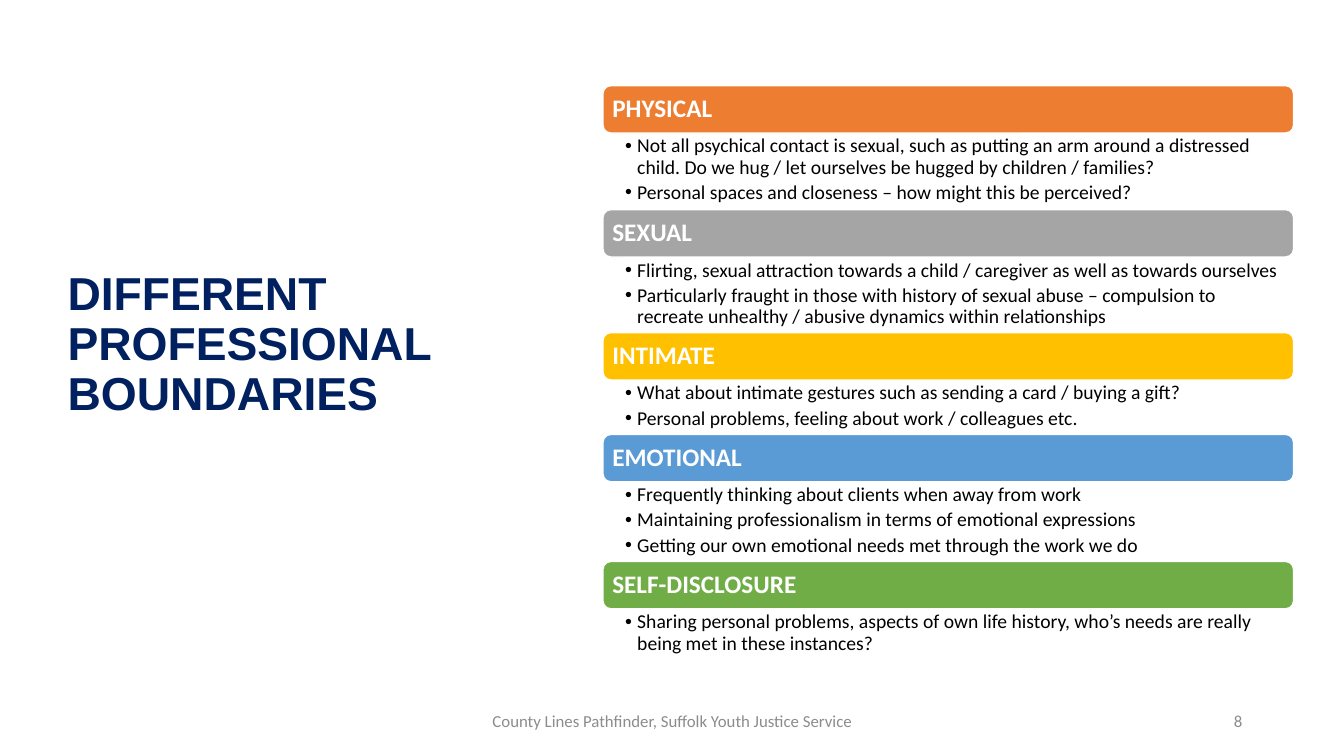
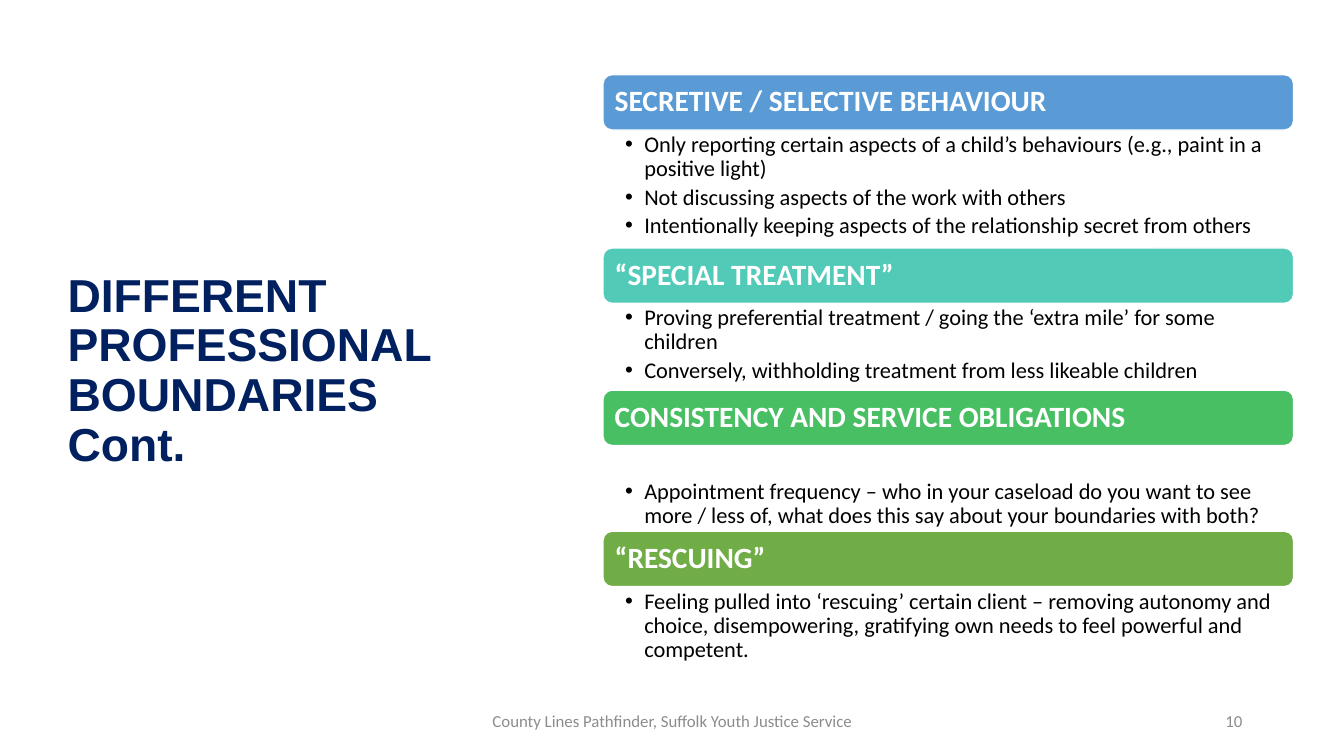
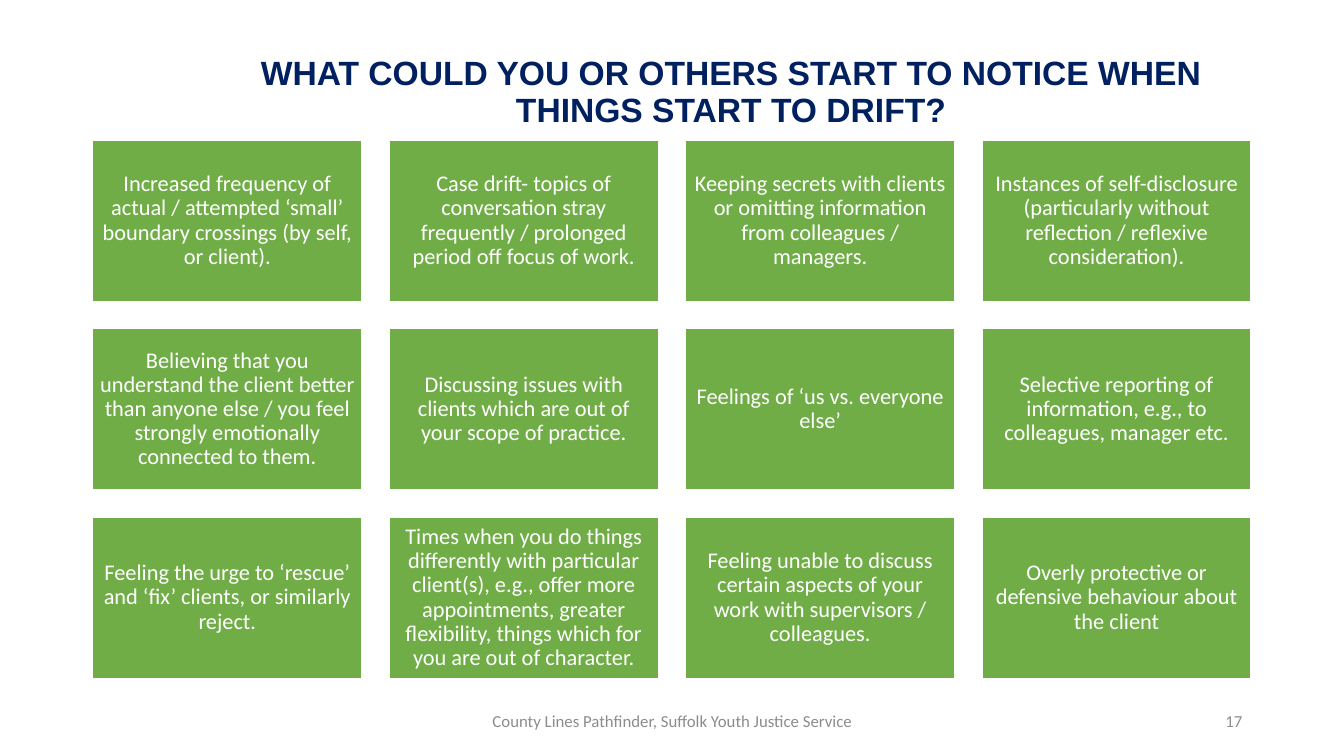
"""Build three slides on professional boundaries."""
from lxml import etree
from pptx import Presentation
from pptx.dml.color import RGBColor
from pptx.enum import shapes, text
from pptx.oxml import ns
from pptx.util import Inches, Pt

WHITE = RGBColor(0xFF, 0xFF, 0xFF)
BLACK = RGBColor(0x00, 0x00, 0x00)
NAVY = RGBColor(0x00, 0x20, 0x60)
FOOTER_GREY = RGBColor(0x8C, 0x8C, 0x8C)
ORANGE = RGBColor(0xED, 0x7D, 0x31)
GREY = RGBColor(0xA5, 0xA5, 0xA5)
GOLD = RGBColor(0xFF, 0xC0, 0x00)
BLUE = RGBColor(0x5B, 0x9B, 0xD5)
TEAL = RGBColor(0x52, 0xCA, 0xB8)
EMERALD = RGBColor(0x49, 0xBF, 0x64)
GREEN = RGBColor(0x70, 0xAD, 0x47)

LEFT, CENTER, RIGHT = text.PP_ALIGN.LEFT, text.PP_ALIGN.CENTER, text.PP_ALIGN.RIGHT
TOP, MIDDLE = text.MSO_ANCHOR.TOP, text.MSO_ANCHOR.MIDDLE
FOOTER = "County Lines Pathfinder, Suffolk Youth Justice Service"


def write(box, lines, font, align=LEFT, anchor=MIDDLE, insets=(0.1, 0.05, 0.1, 0.05),
          spacing=0.9, after=0, bullet_indent=0):
    """Fill a box with one paragraph per line."""
    frame = box.text_frame
    frame_format = {"word_wrap": True, "auto_size": text.MSO_AUTO_SIZE.NONE,
                    "vertical_anchor": anchor}
    for name, value in frame_format.items():
        setattr(frame, name, value)
    for side, inset in zip(("left", "top", "right", "bottom"), insets):
        setattr(frame, f"margin_{side}", Inches(inset))
    para_format = {"alignment": align, "line_spacing": spacing,
                   "space_before": Pt(0), "space_after": Pt(after)}
    for number, line in enumerate(lines):
        para = frame.add_paragraph() if number else frame.paragraphs[0]
        for name, value in para_format.items():
            setattr(para, name, value)
        span = para.add_run()
        span.text = line
        span.font.color.rgb = font["color"]
        for name in ("name", "size", "bold"):
            setattr(span.font, name, font[name])
        if bullet_indent:
            properties = para._p.get_or_add_pPr()
            properties.set("marL", str(Inches(bullet_indent)))
            properties.set("indent", str(-Inches(bullet_indent)))
            etree.SubElement(properties, ns.qn("a:buFont")).set("typeface", "Arial")
            etree.SubElement(properties, ns.qn("a:buChar")).set("char", "•")


def add_panel(page, kind, place, color):
    """Add a filled shape with a thin white outline."""
    panel = page.shapes.add_shape(kind, *map(Inches, place))
    panel.shadow.inherit = False
    panel.fill.solid()
    panel.fill.fore_color.rgb = color
    panel.line.color.rgb = WHITE
    panel.line.width = Pt(1)
    return panel


deck = Presentation()
deck.slide_width, deck.slide_height = Inches(13.33), Inches(7.5)

page_specs = [
    ("8", ["DIFFERENT PROFESSIONAL BOUNDARIES"], (0.57, 0.42, 4.16, 6.02), 33, LEFT),
    ("10", ["DIFFERENT PROFESSIONAL BOUNDARIES", "Cont."], (0.57, 0.68, 4.16, 6.02), 33, LEFT),
    ("17", ["WHAT COULD YOU OR OTHERS START TO NOTICE WHEN THINGS START TO DRIFT?"],
     (2.09, 0, 10.32, 1.85), 24, CENTER),
]
pages = []
for page_number, title_lines, title_place, title_size, title_align in page_specs:
    page = deck.slides.add_slide(deck.slide_layouts[5])
    pages.append(page)
    title = page.shapes.title
    for name, value in zip(("left", "top", "width", "height"), title_place):
        setattr(title, name, Inches(value))
    write(title, title_lines,
          {"name": "Arial", "size": Pt(title_size), "bold": True, "color": NAVY}, title_align)
    for words, left, width, align in ((FOOTER, 4.42, 4.5, CENTER), (page_number, 9.42, 3, RIGHT)):
        box = page.shapes.add_textbox(Inches(left), Inches(6.95), Inches(width), Inches(0.4))
        write(box, [words],
              {"name": "Calibri", "size": Pt(12), "bold": False, "color": FOOTER_GREY},
              align, spacing=1.0)

boundary_sections = [
    ("PHYSICAL", ORANGE, 0.76, 0.03, [
        "Not all psychical contact is sexual, such as putting an arm around a distressed child. "
        "Do we hug / let ourselves be hugged by children / families?",
        "Personal spaces and closeness – how might this be perceived?"]),
    ("SEXUAL", GREY, 0.75, 0.03, [
        "Flirting, sexual attraction towards a child / caregiver as well as towards ourselves",
        "Particularly fraught in those with history of sexual abuse – compulsion to recreate "
        "unhealthy / abusive dynamics within relationships"]),
    ("INTIMATE", GOLD, 0.54, 0.03, [
        "What about intimate gestures such as sending a card / buying a gift?",
        "Personal problems, feeling about work / colleagues etc."]),
    ("EMOTIONAL", BLUE, 0.79, 0.03, [
        "Frequently thinking about clients when away from work",
        "Maintaining professionalism in terms of emotional expressions",
        "Getting our own emotional needs met through the work we do"]),
    ("SELF-DISCLOSURE", GREEN, 0.48, 0.03, [
        "Sharing personal problems, aspects of own life history, who’s needs are really being "
        "met in these instances?"]),
]
more_sections = [
    ("SECRETIVE / SELECTIVE BEHAVIOUR", BLUE, 1.17, 0.03, [
        "Only reporting certain aspects of a child’s behaviours (e.g., paint in a positive light)",
        "Not discussing aspects of the work with others",
        "Intentionally keeping aspects of the relationship secret from others"]),
    ("“SPECIAL TREATMENT”", TEAL, 0.86, 0.03, [
        "Proving preferential treatment / going the ‘extra mile’ for some children",
        "Conversely, withholding treatment from less likeable children"]),
    ("CONSISTENCY AND SERVICE OBLIGATIONS", EMERALD, 0.85, 0.34, [
        "Appointment frequency – who in your caseload do you want to see more / less of, what "
        "does this say about your boundaries with both?"]),
    ("“RESCUING”", GREEN, 0.81, 0.03, [
        "Feeling pulled into ‘rescuing’ certain client – removing autonomy and choice, "
        "disempowering, gratifying own needs to feel powerful and competent."]),
]
section_lists = [
    (pages[0], boundary_sections, 0.85, 0.47, 18, 14, 0.07, 0.14, 0.12),
    (pages[1], more_sections, 0.74, 0.55, 21, 16, 0.09, 0.16, 0.19),
]
for (page, sections, top, bar_height, heading_size, bullet_size,
     heading_inset, right_inset, indent) in section_lists:
    for heading, color, body_height, top_inset, bullets in sections:
        bar = add_panel(page, shapes.MSO_SHAPE.ROUNDED_RECTANGLE,
                        (5.98, top, 6.85, bar_height), color)
        write(bar, [heading],
              {"name": "Calibri", "size": Pt(heading_size), "bold": True, "color": WHITE},
              insets=(heading_inset,) * 4)
        top += bar_height
        body = page.shapes.add_textbox(Inches(5.98), Inches(top), Inches(6.85),
                                       Inches(body_height))
        write(body, bullets,
              {"name": "Calibri", "size": Pt(bullet_size), "bold": False, "color": BLACK},
              anchor=TOP, insets=(0.22, top_inset, right_inset, 0.03),
              after=bullet_size * 0.2, bullet_indent=indent)
        top += body_height

warning_signs = [
    "Increased frequency of actual / attempted ‘small’ boundary crossings (by self, or client).",
    "Case drift- topics of conversation stray frequently / prolonged period off focus of work.",
    "Keeping secrets with clients or omitting information from colleagues / managers.",
    "Instances of self-disclosure (particularly without reflection / reflexive consideration).",
    "Believing that you understand the client better than anyone else / you feel strongly "
    "emotionally connected to them.",
    "Discussing issues with clients which are out of your scope of practice.",
    "Feelings of ‘us vs. everyone else’",
    "Selective reporting of information, e.g., to colleagues, manager etc.",
    "Feeling the urge to ‘rescue’ and ‘fix’ clients, or similarly reject.",
    "Times when you do things differently with particular client(s), e.g., offer more "
    "appointments, greater flexibility, things which for you are out of character.",
    "Feeling unable to discuss certain aspects of your work with supervisors / colleagues.",
    "Overly protective or defensive behaviour about the client",
]
card_width, card_height, card_gap = 2.67, 1.6, 0.27
for number, sign in enumerate(warning_signs):
    row, column = divmod(number, 4)
    card = add_panel(pages[2], shapes.MSO_SHAPE.RECTANGLE,
                     (0.92 + column * (card_width + card_gap),
                      1.39 + row * (card_height + card_gap), card_width, card_height), GREEN)
    write(card, [sign],
          {"name": "Calibri", "size": Pt(16), "bold": False, "color": WHITE},
          CENTER, insets=(0.07,) * 4)

deck.save("out.pptx")
